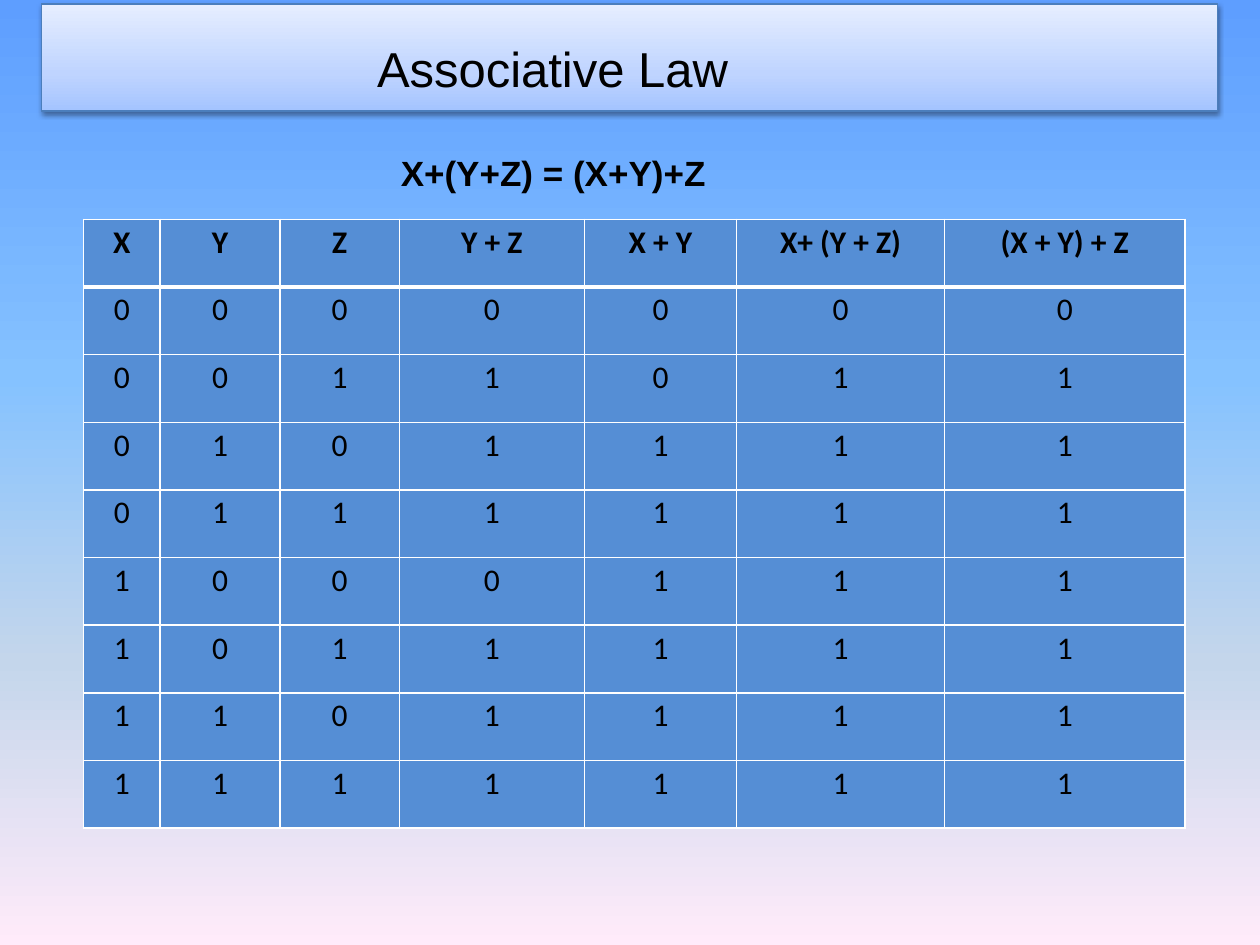
from lxml import etree
from pptx import Presentation
from pptx.dml.color import RGBColor
from pptx.enum.text import MSO_ANCHOR, MSO_AUTO_SIZE, PP_ALIGN
from pptx.oxml.ns import qn
from pptx.util import Cm, Pt

LEFT, CENTER = PP_ALIGN.LEFT, PP_ALIGN.CENTER
MIDDLE, BOTTOM = MSO_ANCHOR.MIDDLE, MSO_ANCHOR.BOTTOM
FIXED = MSO_AUTO_SIZE.NONE

BLACK = RGBColor(0x00, 0x00, 0x00)
WHITE = RGBColor(0xFF, 0xFF, 0xFF)
BLUE = RGBColor(0x55, 0x8E, 0xD5)
EDGE = RGBColor(0x4B, 0x7E, 0xBC)
SKY = [(0, RGBColor(0x5E, 0x9E, 0xFF)), (40, RGBColor(0x85, 0xC2, 0xFF)),
       (70, RGBColor(0xC4, 0xD6, 0xEB)), (100, RGBColor(0xFF, 0xEB, 0xFA))]
BAND = [(0, RGBColor(0xA4, 0xC4, 0xFF)), (35, RGBColor(0xBF, 0xD4, 0xFF)),
        (100, RGBColor(0xE6, 0xEE, 0xFF))]

# Content
TITLE = "Associative Law"
LAW = "X+(Y+Z) = (X+Y)+Z"
HEADS = ["X", "Y", "Z", "Y + Z", "X + Y", "X+ (Y + Z)", "(X + Y) + Z"]
BITS = ["0000000", "0011011", "0101111", "0111111",
        "1000111", "1011111", "1101111", "1111111"]
WIDTHS = [1.55, 2.41, 2.41, 3.73, 3.07, 4.19, 4.85]
HIGH = 12.28


def add(parent, tag, **attrs):
    node = etree.SubElement(parent, qn(tag))
    for key, value in attrs.items():
        node.set(key, str(value))
    return node


def blend(fill, root, stops, angle):
    fill.gradient()
    fill.gradient_angle = angle
    group = next(root.iter(qn("a:gsLst")))
    for old in list(group):
        group.remove(old)
    for place, color in stops:
        stop = add(group, "a:gs", pos=place * 1000)
        add(stop, "a:srgbClr", val=color)


def style(para, name, size, bold, align):
    para.alignment = align
    for run in para.runs:
        font = run.font
        font.name, font.size, font.bold = name, Pt(size), bold
        font.color.rgb = BLACK


def write(shape, text, size, bold, anchor, left, top):
    frame = shape.text_frame
    frame.text = text
    frame.word_wrap = True
    frame.auto_size = FIXED
    frame.vertical_anchor = anchor
    frame.margin_left, frame.margin_top = Cm(left), Cm(top)
    frame.margin_right = frame.margin_bottom = 0
    style(frame.paragraphs[0], "Arial", size, bold, LEFT)


def border(cell, side, width):
    props = cell._tc.get_or_add_tcPr()
    line = add(props, "a:" + side, w=Pt(width))
    add(add(line, "a:solidFill"), "a:srgbClr", val=WHITE)


prs = Presentation()
prs.slide_width, prs.slide_height = Cm(25.4), Cm(19.05)
slide = prs.slides.add_slide(prs.slide_layouts[5])
blend(slide.background.fill, slide.element, SKY, 270)

# Title band
title = slide.shapes.title
title.left, title.top = Cm(0.84), Cm(0.08)
title.width, title.height = Cm(23.7), Cm(2.16)
blend(title.fill, title.element, BAND, 90)
title.line.color.rgb = EDGE
title.line.width = Pt(0.75)
effects = add(title.element.spPr, "a:effectLst")
shade = add(effects, "a:outerShdw", blurRad=Pt(3.1), dist=Pt(1.6),
            dir=90 * 60000, rotWithShape=0)
add(add(shade, "a:srgbClr", val=BLACK), "a:alpha", val=38000)
write(title, TITLE, 28, False, MIDDLE, 6.76, 0.43)

# Law
law = slide.shapes.add_textbox(Cm(0.64), Cm(1.8), Cm(14.83), Cm(2.11))
write(law, LAW, 20, True, BOTTOM, 7.44, 0)

# Truth table
rows = [HEADS] + [list(line) for line in BITS]
table = slide.shapes.add_table(len(rows), len(HEADS), Cm(1.68), Cm(4.42),
                               Cm(sum(WIDTHS)), Cm(HIGH)).table
table.horz_banding = False
for col, width in zip(table.columns, WIDTHS):
    col.width = Cm(width)
for r, row in enumerate(rows):
    table.rows[r].height = Cm(HIGH / len(rows))
    for c, text in enumerate(row):
        cell = table.cell(r, c)
        cell.text = text
        cell.margin_left = cell.margin_right = cell.margin_bottom = 0
        cell.margin_top = Cm(0.08)
        style(cell.text_frame.paragraphs[0], "Calibri", 18, r == 0, CENTER)
        border(cell, "lnL", 1)
        border(cell, "lnR", 1)
        border(cell, "lnT", 3 if r == 1 else 1)
        border(cell, "lnB", 3 if r == 0 else 1)
        cell.fill.solid()
        cell.fill.fore_color.rgb = BLUE

prs.save("out.pptx")
